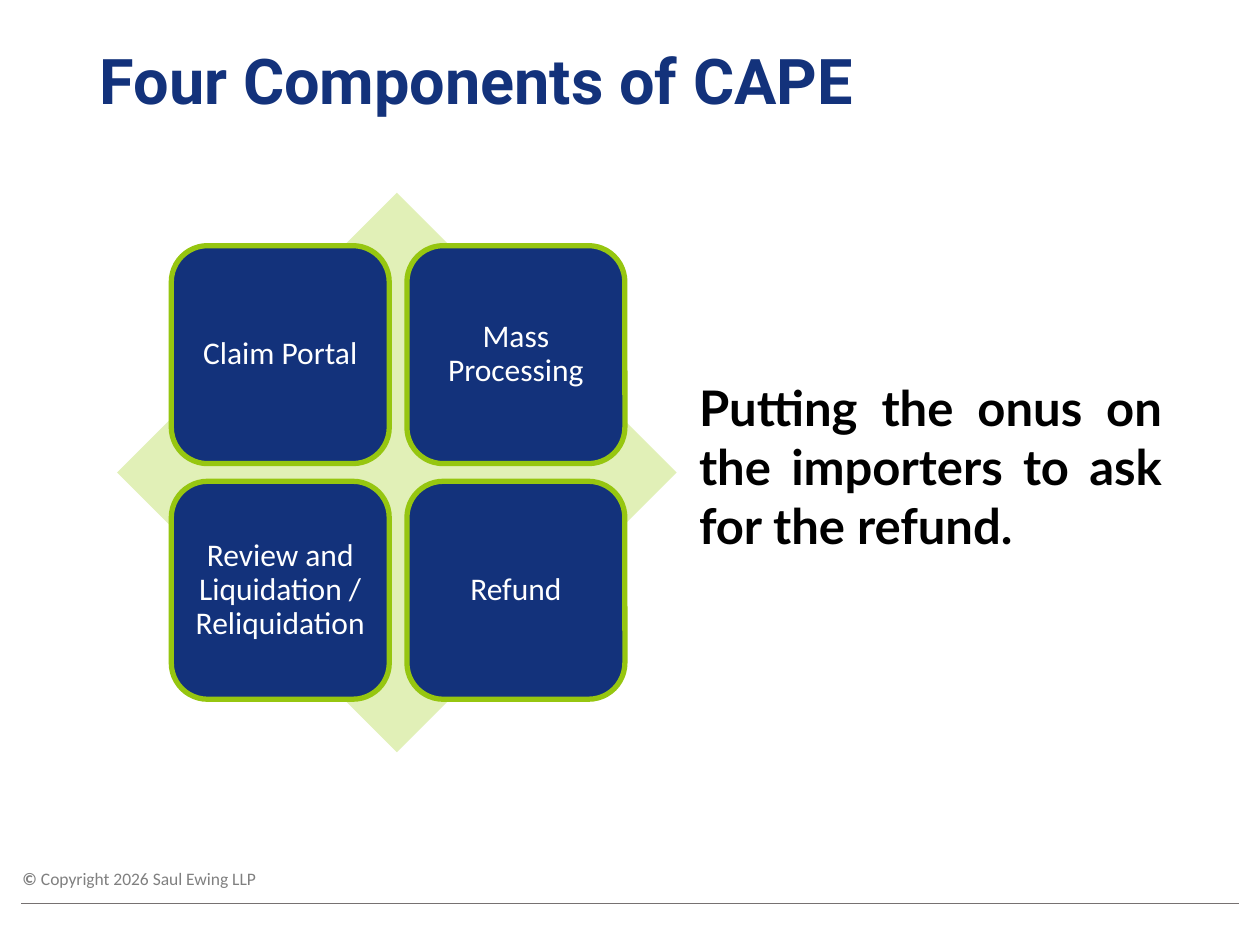
from dataclasses import dataclass

from lxml import etree
from pptx import Presentation
from pptx import util as u
from pptx.dml.color import RGBColor
from pptx.enum import shapes, text
from pptx.oxml.ns import qn

NAVY = RGBColor(0x13, 0x32, 0x7B)
GREEN = RGBColor(0x96, 0xC6, 0x10)
PALE_GREEN = RGBColor(0xE1, 0xF0, 0xB7)
GRAY = RGBColor(0x80, 0x80, 0x80)
RULE_GRAY = RGBColor(0x76, 0x71, 0x71)
WHITE = RGBColor(0xFF, 0xFF, 0xFF)
BLACK = RGBColor(0x00, 0x00, 0x00)

TILE_SIZE = 1.73
TILE_LEFT, TILE_TOP, TILE_STEP = 1.36, 1.95, 1.87


@dataclass
class Tile:
    label: str
    row: int
    col: int


TILES = [
    Tile("Claim Portal", 0, 0),
    Tile("Mass Processing", 0, 1),
    Tile("Review and Liquidation / Reliquidation", 1, 0),
    Tile("Refund", 1, 1),
]


def inches(*values: float) -> list:
    return [u.Inches(v) for v in values]


def set_attrs(target, values: dict) -> None:
    for name, value in values.items():
        setattr(target, name, value)


def add_run(p, words: str, color: RGBColor, **font) -> None:
    r = p.add_run()
    r.text = words
    set_attrs(r.font, font)
    r.font.color.rgb = color


def add_filled(s, kind, box: list, fill: RGBColor):
    sp = s.shapes.add_shape(kind, *box)
    sp.shadow.inherit = False
    sp.fill.solid()
    sp.fill.fore_color.rgb = fill
    sp.line.fill.background()
    return sp


def add_tile(s, tile: Tile) -> None:
    box = inches(TILE_LEFT + tile.col * TILE_STEP,
                 TILE_TOP + tile.row * TILE_STEP, TILE_SIZE, TILE_SIZE)
    sp = add_filled(s, shapes.MSO_SHAPE.ROUNDED_RECTANGLE, box, NAVY)
    sp.line.color.rgb = GREEN
    sp.line.width = u.Pt(3)
    tf = sp.text_frame
    set_attrs(tf, {"word_wrap": True, "vertical_anchor": text.MSO_ANCHOR.MIDDLE})
    sides = ("margin_left", "margin_top", "margin_right", "margin_bottom")
    set_attrs(tf, dict.fromkeys(sides, u.Inches(0.07)))
    p = tf.paragraphs[0]
    set_attrs(p, {"alignment": text.PP_ALIGN.CENTER, "line_spacing": 0.9})
    add_run(p, tile.label, WHITE, name="Calibri", size=u.Pt(18))


def add_title(s) -> None:
    sp = s.shapes.title
    box = inches(0.69, 0.25, 8.62, 0.84)
    set_attrs(sp, dict(zip(("left", "top", "width", "height"), box)))
    sp.text_frame.vertical_anchor = text.MSO_ANCHOR.MIDDLE
    p = sp.text_frame.paragraphs[0]
    set_attrs(p, {"alignment": text.PP_ALIGN.LEFT, "line_spacing": 0.9})
    add_run(p, "Four Components of CAPE", NAVY,
            name="Roboto", size=u.Pt(36), bold=True)


def add_message(s) -> None:
    tf = s.shapes.add_textbox(*inches(5.45, 2.95, 3.87, 1.6)).text_frame
    tf.word_wrap = True
    p = tf.paragraphs[0]
    p.alignment = text.PP_ALIGN.JUSTIFY
    add_run(p, "Putting the onus on the importers to ask for the refund.", BLACK,
            name="Lato", size=u.Pt(28), bold=True)


def add_footer(s) -> None:
    tf = s.shapes.add_textbox(*inches(0.08, 6.84, 2.08, 0.27)).text_frame
    tf.word_wrap = False
    p = tf.paragraphs[0]
    for words, bold in (("© ", True), ("Copyright 2026 Saul Ewing LLP", False)):
        add_run(p, words, GRAY, name="Calibri", size=u.Pt(10), bold=bold)
    rule = s.shapes.add_connector(shapes.MSO_CONNECTOR.STRAIGHT,
                                  *inches(0.17, 7.17, 9.83, 7.17))
    rule.line.color.rgb = RULE_GRAY
    rule.line.width = u.Pt(0.5)
    etree.SubElement(rule._element.spPr, qn("a:effectLst"))


def main() -> None:
    prs = Presentation()
    prs.slide_width, prs.slide_height = inches(10, 7.5)
    s = prs.slides.add_slide(prs.slide_layouts.get_by_name("Title Only"))
    add_footer(s)
    add_message(s)
    add_title(s)
    add_filled(s, shapes.MSO_SHAPE.DIAMOND, inches(0.93, 1.53, 4.44, 4.44), PALE_GREEN)
    for tile in TILES:
        add_tile(s, tile)
    prs.save("out.pptx")


if __name__ == "__main__":
    main()
